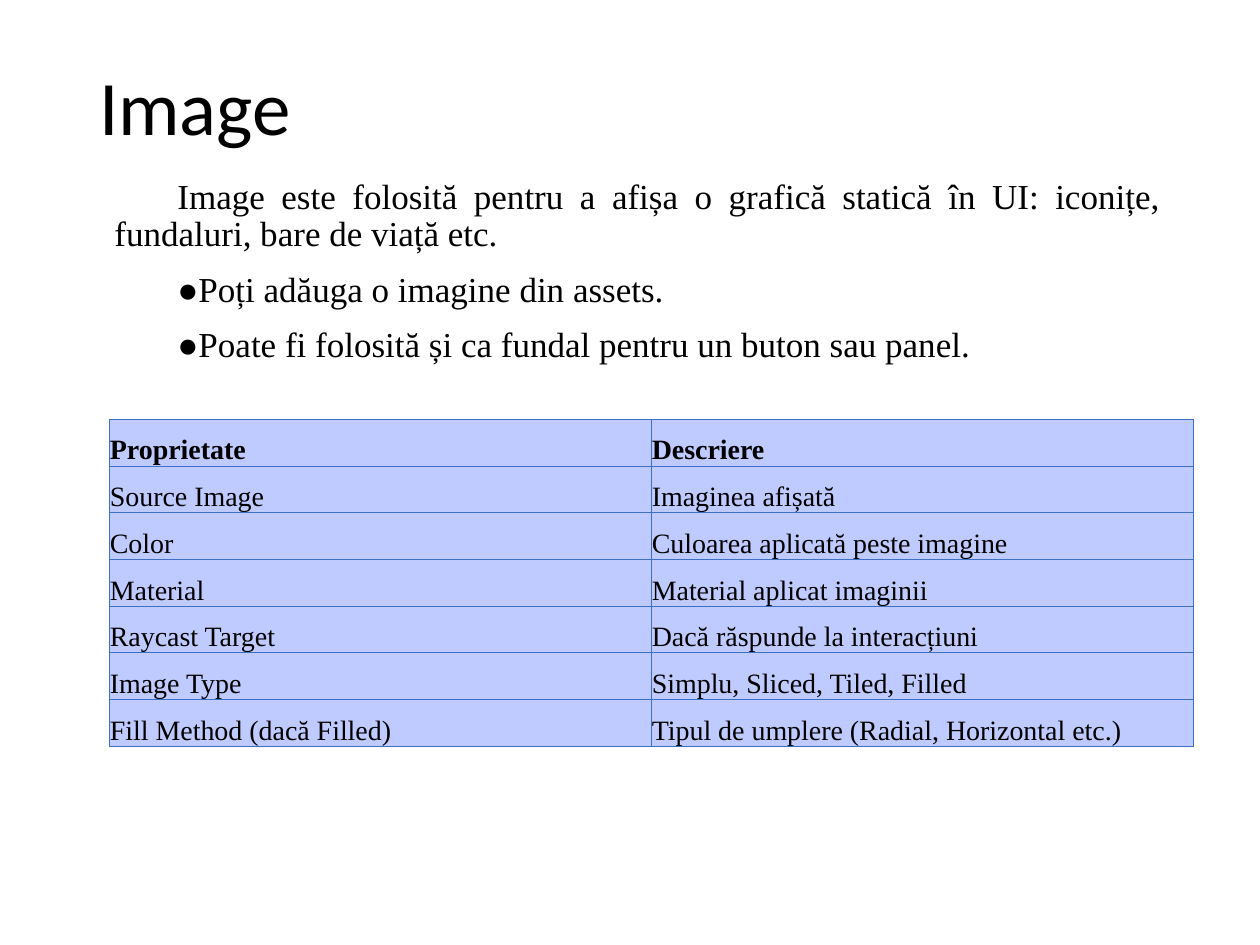
from lxml import etree
from pptx import Presentation
from pptx.dml.color import RGBColor
from pptx.enum.text import MSO_ANCHOR, MSO_AUTO_SIZE, PP_ALIGN
from pptx.oxml.ns import qn
from pptx.util import Pt

LEFT, JUSTIFY = PP_ALIGN.LEFT, PP_ALIGN.JUSTIFY
TOP, MIDDLE = MSO_ANCHOR.TOP, MSO_ANCHOR.MIDDLE
NO_AUTOFIT = MSO_AUTO_SIZE.NONE
TITLE_AND_CONTENT = 1

INTRODUCTION = [
    "Image este folosită pentru a afișa o grafică statică în UI: "
    "iconițe, fundaluri, bare de viață etc.",
    "●Poți adăuga o imagine din assets.",
    "●Poate fi folosită și ca fundal pentru un buton sau panel.",
]
PROPERTIES = [
    ("Proprietate", "Descriere"),
    ("Source Image", "Imaginea afișată"),
    ("Color", "Culoarea aplicată peste imagine"),
    ("Material", "Material aplicat imaginii"),
    ("Raycast Target", "Dacă răspunde la interacțiuni"),
    ("Image Type", "Simplu, Sliced, Tiled, Filled"),
    ("Fill Method (dacă Filled)", "Tipul de umplere (Radial, Horizontal etc.)"),
]


def color(hex_string):
    return RGBColor.from_string(hex_string)


def write_text(paragraph, text, *, font, size, hex_color="000000", bold=False,
               align=LEFT, line_spacing=0.9, space_before=0):
    paragraph.alignment = align
    paragraph.line_spacing = line_spacing
    paragraph.space_before = Pt(space_before)
    paragraph.space_after = Pt(0)
    run = paragraph.add_run()
    run.text = text
    run.font.name = font
    run.font.size = Pt(size)
    run.font.bold = bold
    run.font.color.rgb = color(hex_color)


class SlideBuilder:
    title_font = "Calibri"
    body_font = "Times New Roman"
    cell_fill = "BFCBFF"
    border_color = "3F6FC3"
    border_width = 0.75

    def __init__(self, slide):
        self.slide = slide

    def place(self, shape, left, top, width, height, anchor):
        shape.left, shape.top = Pt(left), Pt(top)
        shape.width, shape.height = Pt(width), Pt(height)
        frame = shape.text_frame
        frame.auto_size = NO_AUTOFIT
        frame.word_wrap = True
        frame.vertical_anchor = anchor
        return frame

    def title(self, text, *box):
        frame = self.place(self.slide.shapes.title, *box, MIDDLE)
        write_text(frame.paragraphs[0], text, font=self.title_font, size=44)

    def body(self, lines, *box):
        frame = self.place(self.slide.placeholders[1], *box, TOP)
        for index, line in enumerate(lines):
            paragraph = frame.add_paragraph() if index else frame.paragraphs[0]
            write_text(paragraph, line, font=self.body_font, size=20,
                       align=JUSTIFY, space_before=10)
            # First-line indent without the template's bullet
            properties = paragraph._p.get_or_add_pPr()
            properties.set("marL", str(Pt(8.64)))
            properties.set("indent", str(Pt(36)))
            etree.SubElement(properties, qn("a:buNone"))

    def table(self, rows, left, top, width, row_height):
        frame = self.slide.shapes.add_table(
            len(rows), len(rows[0]), Pt(left), Pt(top),
            Pt(width), Pt(row_height * len(rows)))
        for row_index, row in enumerate(rows):
            for column_index, text in enumerate(row):
                cell = frame.table.cell(row_index, column_index)
                cell.margin_left = cell.margin_right = Pt(0)
                cell.margin_top = cell.margin_bottom = Pt(0)
                cell.fill.solid()
                cell.fill.fore_color.rgb = color(self.cell_fill)
                self.borders(cell)
                write_text(cell.text_frame.paragraphs[0], text,
                           font=self.body_font, size=16,
                           bold=row_index == 0, line_spacing=1.5)

    def borders(self, cell):
        properties = cell._tc.get_or_add_tcPr()
        for index, side in enumerate(("lnL", "lnR", "lnT", "lnB")):
            line = etree.Element(qn(f"a:{side}"), w=str(Pt(self.border_width)))
            fill = etree.SubElement(line, qn("a:solidFill"))
            etree.SubElement(fill, qn("a:srgbClr"), val=self.border_color)
            properties.insert(index, line)


def main():
    presentation = Presentation()
    presentation.slide_width, presentation.slide_height = Pt(720), Pt(540)
    layout = presentation.slide_layouts[TITLE_AND_CONTENT]
    builder = SlideBuilder(presentation.slides.add_slide(layout))

    # Heading and introduction
    builder.title("Image", 49.5, 10.8, 621, 104.4)
    builder.body(INTRODUCTION, 49.5, 98.6, 621, 342.7)

    # Component properties
    builder.table(PROPERTIES, 62.8, 239.7, 619.4, 26.7)

    presentation.save("out.pptx")


if __name__ == "__main__":
    main()
